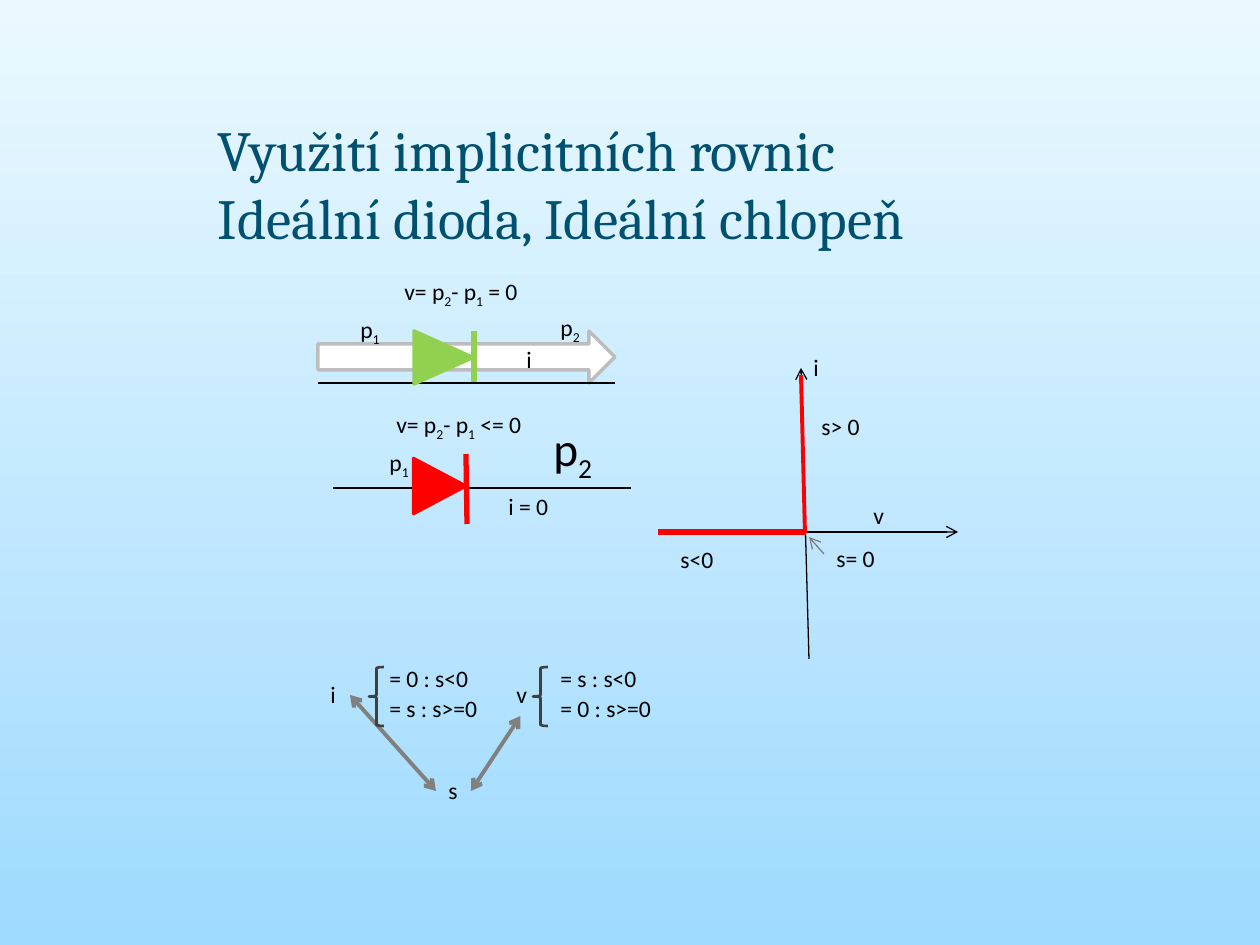
import pptx
import pptx.dml.color
import pptx.enum.shapes
import pptx.enum.text
import pptx.oxml.ns
import pptx.util
from lxml import etree

RGB = pptx.dml.color.RGBColor
SHAPE = pptx.enum.shapes.MSO_SHAPE
BLACK = RGB(0x00, 0x00, 0x00)
WHITE = RGB(0xFF, 0xFF, 0xFF)
RED = RGB(0xFF, 0x00, 0x00)
GREEN = RGB(0x92, 0xD0, 0x50)
GREY = RGB(0x80, 0x80, 0x80)
SILVER = RGB(0xBD, 0xBD, 0xBD)
DARK = RGB(0x40, 0x40, 0x40)
NAVY = RGB(0x00, 0x50, 0x70)
SKY = (RGB(0xEB, 0xF9, 0xFF), RGB(0x9F, 0xDA, 0xFF))

EMU_PER_PX = 914400 / 126
TEXT_HEIGHT = 42

TITLE = "Využití implicitních rovnic\vIdeální dioda, Ideální chlopeň"

# An underscore lowers the character that follows it.
DIODE_LABELS = [
    ("p_1", 348, 309, 45, 13.5),
    ("p_2", 548, 307, 45, 13.5),
    ("p_1", 377, 442, 45, 13.5),
    ("p_2", 541, 413, 67, 27),
    ("i", 514, 339, 32, 13.5),
    ("i = 0", 496, 486, 66, 13.5),
    ("v= p_2- p_1 = 0", 392, 271, 142, 13.5),
    ("v= p_2- p_1 <= 0", 384, 404, 154, 13.5),
]
GRAPH_LABELS = [
    ("i", 801, 347, 52),
    ("v", 861, 495, 52),
    ("s<0", 668, 539, 156),
    ("s> 0", 809, 406, 156),
    ("s= 0", 824, 538, 156),
]
VARIABLES = {"i": (318, 674, 32), "v": (504, 674, 33), "s": (436, 770, 35)}
DEPENDENCIES = [("i", 3, "s", 1), ("v", 2, "s", 3)]
CASES = [
    (("= 0 : s<0", "= s : s>=0"), 369, 377, 126),
    (("= s : s<0", "= 0 : s>=0"), 533, 548, 194),
]
CASE_TOP, CASE_STEP = 658, 30

LINES = [
    ((318, 383), (615, 383), BLACK, 0.75, ()),
    ((333, 488), (631, 488), BLACK, 0.75, ()),
    ((466, 454), (467, 524), RED, 3, ()),
    ((474, 331), (474, 382), GREEN, 3, ()),
    ((801, 368), (809, 659), BLACK, 0.75, ("headEnd",)),
    ((660, 532), (958, 532), BLACK, 0.75, ("tailEnd",)),
    ((658, 532), (806, 532), RED, 3, ()),
    ((805, 533), (801, 375), RED, 2.25, ()),
    ((824, 554), (809, 537), GREY, 0.75, ("tailEnd",)),
]
TRIANGLES = [((412, 460, 55, 52), RED), ((417, 328, 53, 59), GREEN)]


def px(*lengths):
    return [pptx.util.Emu(round(length * EMU_PER_PX)) for length in lengths]


def write(frame, text, size=13.5, font="Calibri", color=BLACK):
    paragraph = frame.paragraphs[0]
    first, *lowered = text.split("_")
    pieces = [(first, False)]
    for piece in lowered:
        pieces += [(piece[0], True), (piece[1:], False)]
    for piece, is_low in pieces:
        if not piece:
            continue
        run = paragraph.add_run()
        run.text = piece
        run.font.size = pptx.util.Pt(size)
        run.font.name = font
        run.font.color.rgb = color
        if is_low:
            run.font._element.set("baseline", "-25000")


def add_label(shapes, text, x, y, width, size=13.5, wrap=False):
    label = shapes.add_textbox(*px(x, y, width, TEXT_HEIGHT * size / 13.5))
    label.text_frame.word_wrap = wrap
    label.text_frame.auto_size = pptx.enum.text.MSO_AUTO_SIZE.SHAPE_TO_FIT_TEXT
    write(label.text_frame, text, size=size)
    return label


def add_outlined(shapes, preset, box, line, weight, fill=None):
    shape = shapes.add_shape(preset, *px(*box))
    shape.shadow.inherit = False
    if fill is None:
        shape.fill.background()
    else:
        shape.fill.solid()
        shape.fill.fore_color.rgb = fill
    shape.line.color.rgb = line
    shape.line.width = pptx.util.Pt(weight)
    return shape


def add_line(shapes, start, end, color, weight, arrows):
    line = shapes.add_connector(
        pptx.enum.shapes.MSO_CONNECTOR.STRAIGHT, *px(*start, *end))
    line.line.color.rgb = color
    line.line.width = pptx.util.Pt(weight)
    for arrow in arrows:
        etree.SubElement(line.line._get_or_add_ln(),
                         pptx.oxml.ns.qn("a:" + arrow), type="arrow")
    etree.SubElement(line._element.spPr, pptx.oxml.ns.qn("a:effectLst"))
    return line


def main():
    deck = pptx.Presentation()
    deck.slide_width, deck.slide_height = px(1260, 945)
    slide = deck.slides.add_slide(deck.slide_layouts[5])
    shapes = slide.shapes

    sky = slide.background.fill
    sky.gradient()
    sky.gradient_angle = 270
    for stop, color, position in zip(sky.gradient_stops, SKY, (0, 1)):
        stop.color.rgb = color
        stop.position = position

    title = shapes.title
    title.left, title.top, title.width, title.height = px(205, 130, 847, 105)
    frame = title.text_frame
    frame.auto_size = pptx.enum.text.MSO_AUTO_SIZE.NONE
    frame.vertical_anchor = pptx.enum.text.MSO_ANCHOR.MIDDLE
    frame.text = TITLE
    frame.paragraphs[0].alignment = pptx.enum.text.PP_ALIGN.LEFT
    for font in [run.font for run in frame.paragraphs[0].runs]:
        font.size = pptx.util.Pt(32.4)
        font.name = "Cambria"
        font.color.rgb = NAVY

    add_outlined(shapes, SHAPE.RIGHT_ARROW, (318, 331, 297, 52), SILVER, 2, WHITE)
    for line in LINES:
        add_line(shapes, *line)
    for box, color in TRIANGLES:
        add_outlined(shapes, SHAPE.ISOSCELES_TRIANGLE, box, color, 2, color).rotation = 90
    for label in DIODE_LABELS:
        add_label(shapes, *label)
    for label in GRAPH_LABELS:
        add_label(shapes, *label, wrap=True)

    variables = {name: add_label(shapes, name, *place)
                 for name, place in VARIABLES.items()}
    for source, source_side, target, target_side in DEPENDENCIES:
        link = add_line(shapes, (0, 0), (0, 0), GREY, 2.25, ("headEnd", "tailEnd"))
        link.begin_connect(variables[source], source_side)
        link.end_connect(variables[target], target_side)

    for cases, brace_x, text_x, width in CASES:
        group = shapes.add_group_shape().shapes
        add_outlined(group, SHAPE.LEFT_BRACE, (brace_x, 667, 15, 59), DARK, 1.5)
        for row, case in enumerate(cases):
            add_label(group, case, text_x, CASE_TOP + row * CASE_STEP, width, wrap=True)

    deck.save("out.pptx")


if __name__ == "__main__":
    main()
